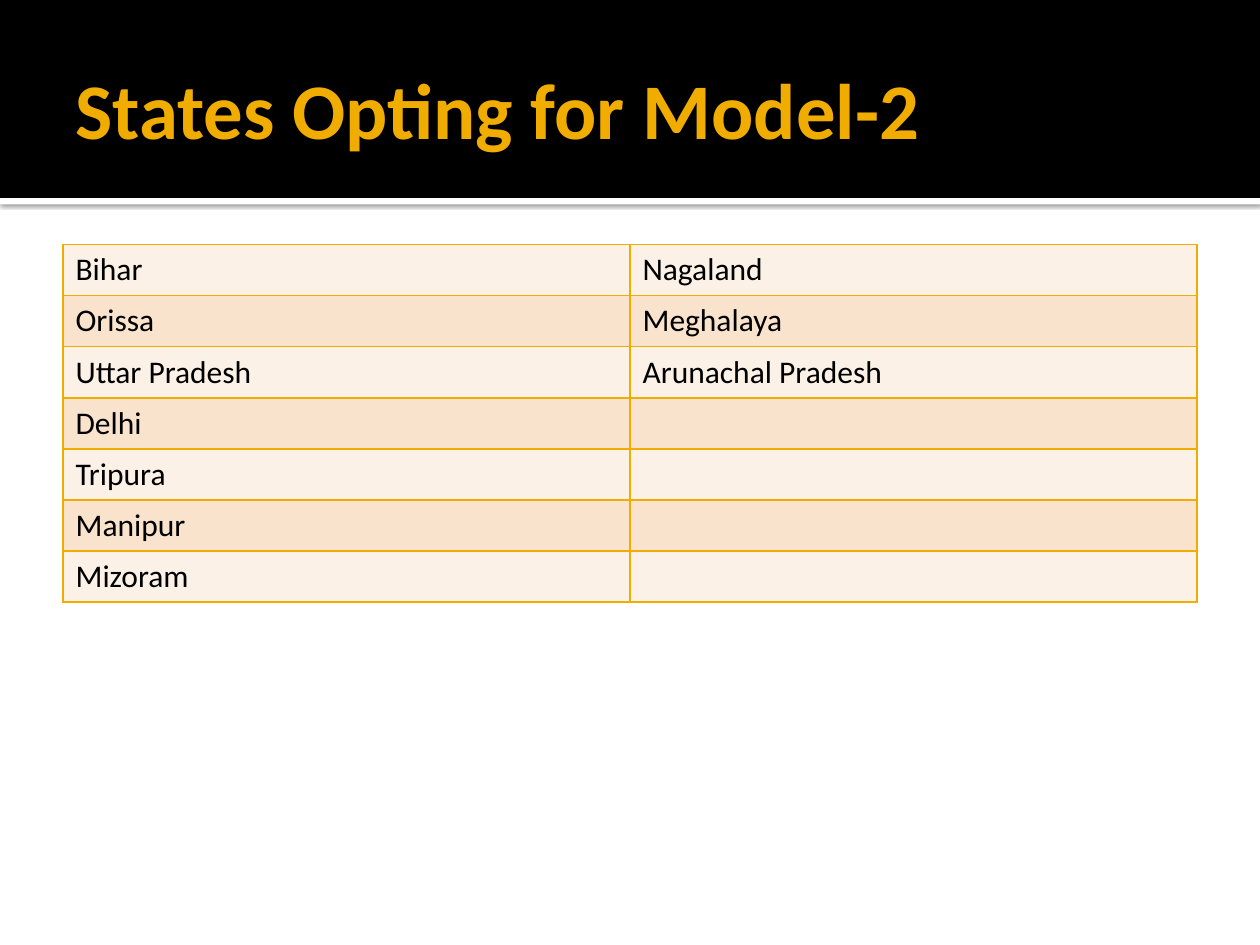
from lxml.etree import SubElement
from pptx import Presentation
from pptx.dml.color import RGBColor
from pptx.enum.shapes import MSO_SHAPE
from pptx.enum.text import MSO_ANCHOR, PP_ALIGN
from pptx.oxml.ns import qn
from pptx.util import Cm, Pt

BLACK = RGBColor(0x00, 0x00, 0x00)
WHITE = RGBColor(0xFF, 0xFF, 0xFF)
AMBER = RGBColor(0xF0, 0xAD, 0x00)
LIGHT_BAND = RGBColor(0xFC, 0xF1, 0xE7)
DARK_BAND = RGBColor(0xF9, 0xE3, 0xCC)
FONT = "Calibri"
SLIDE_WIDTH = Cm(25.4)
HEADER_HEIGHT = Cm(3.99)
STATES = [
    ("Bihar", "Nagaland"),
    ("Orissa", "Meghalaya"),
    ("Uttar Pradesh", "Arunachal Pradesh"),
    ("Delhi", ""),
    ("Tripura", ""),
    ("Manipur", ""),
    ("Mizoram", ""),
]


def format_runs(text_frame, size, color, bold=False):
    for paragraph in text_frame.paragraphs:
        for run in paragraph.runs:
            run.font.name = FONT
            run.font.size = Pt(size)
            run.font.bold = bold
            run.font.color.rgb = color


def add_band(slide, top, height, color):
    shape = slide.shapes.add_shape(MSO_SHAPE.RECTANGLE, 0, top, SLIDE_WIDTH, height)
    shape.fill.solid()
    shape.fill.fore_color.rgb = color
    shape.line.fill.background()
    shape.shadow.inherit = False
    slide.shapes.title.element.addprevious(shape.element)
    return shape


def add_shadow(shape):
    effects = shape.element.spPr.find(qn("a:effectLst"))
    shadow = SubElement(
        effects, qn("a:outerShdw"), blurRad=str(Pt(2.5)), dist=str(Pt(0.8)),
        dir="5400000", algn="tl", rotWithShape="0",
    )
    color = SubElement(shadow, qn("a:srgbClr"), val=str(BLACK))
    SubElement(color, qn("a:alpha"), val="60000")


def set_title(slide, text):
    title = slide.shapes.title
    title.left, title.top = Cm(1.27), Cm(0.43)
    title.width, title.height = Cm(22.86), Cm(3.48)
    text_frame = title.text_frame
    text_frame.text = text
    text_frame.word_wrap = True
    text_frame.vertical_anchor = MSO_ANCHOR.MIDDLE
    text_frame.margin_left = Cm(0.25)
    text_frame.margin_right = text_frame.margin_top = text_frame.margin_bottom = Cm(0.13)
    text_frame.paragraphs[0].alignment = PP_ALIGN.LEFT
    format_runs(text_frame, 45, AMBER, bold=True)


def set_borders(cell, color):
    properties = cell._tc.get_or_add_tcPr()
    for side in ("lnL", "lnR", "lnT", "lnB"):
        line = SubElement(properties, qn(f"a:{side}"), w=str(Pt(1)))
        fill = SubElement(line, qn("a:solidFill"))
        SubElement(fill, qn("a:srgbClr"), val=str(color))


def add_states_table(slide, rows):
    row_height = Cm(1.03)
    table = slide.shapes.add_table(
        len(rows), len(rows[0]), Cm(1.27), Cm(4.93), Cm(22.86), row_height * len(rows)
    ).table
    table.first_row = False
    for row_index, names in enumerate(rows):
        table.rows[row_index].height = row_height
        for column_index, name in enumerate(names):
            cell = table.cell(row_index, column_index)
            set_borders(cell, AMBER)
            cell.fill.solid()
            cell.fill.fore_color.rgb = DARK_BAND if row_index % 2 else LIGHT_BAND
            if name:
                cell.text_frame.text = name
                format_runs(cell.text_frame, 18, BLACK)


def main():
    presentation = Presentation()
    presentation.slide_width, presentation.slide_height = SLIDE_WIDTH, Cm(19.05)
    slide = presentation.slides.add_slide(presentation.slide_layouts[5])
    add_shadow(add_band(slide, HEADER_HEIGHT, Cm(0.13), WHITE))
    add_band(slide, 0, HEADER_HEIGHT, BLACK)
    set_title(slide, "States Opting for Model-2")
    add_states_table(slide, STATES)
    presentation.save("out.pptx")


if __name__ == "__main__":
    main()
